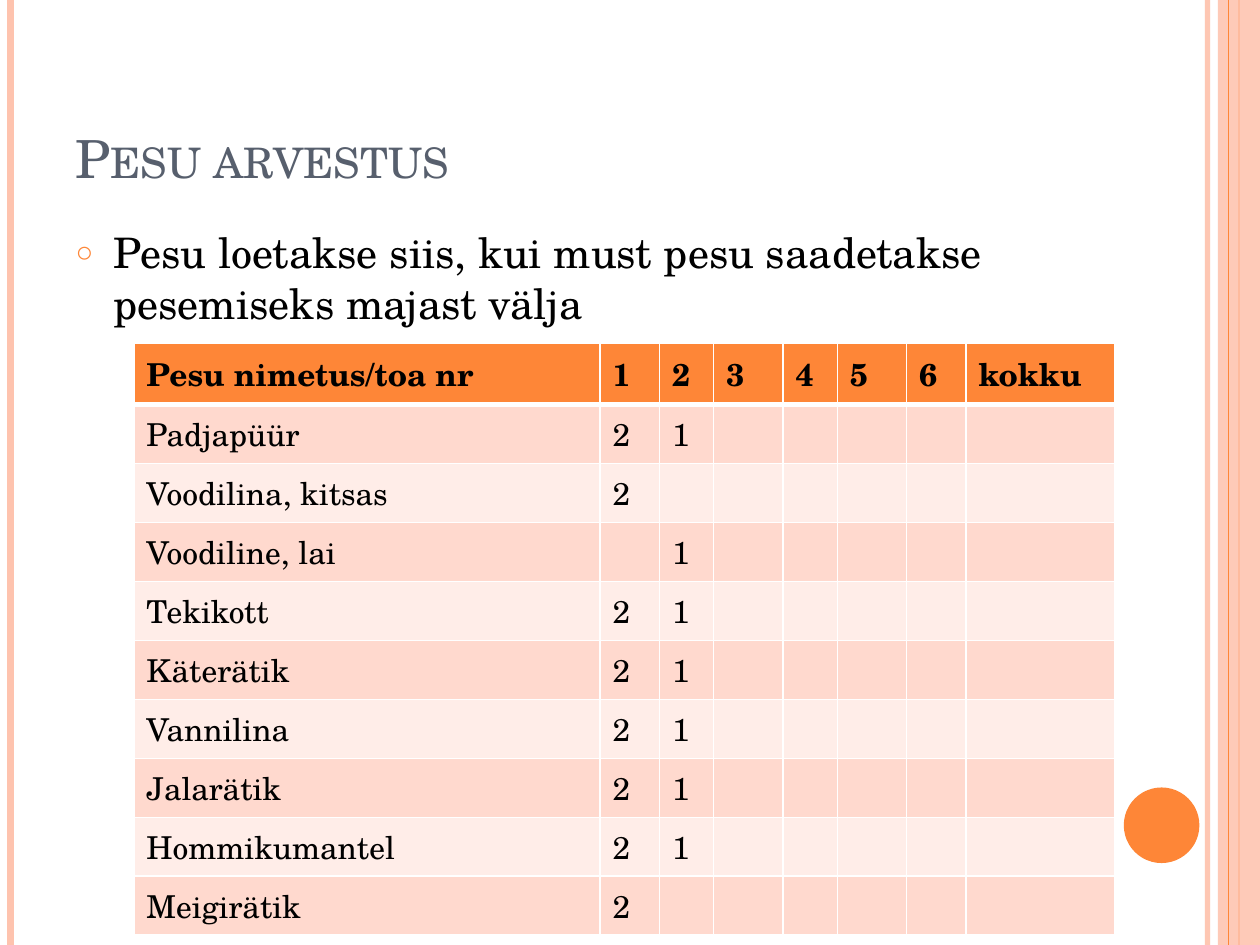
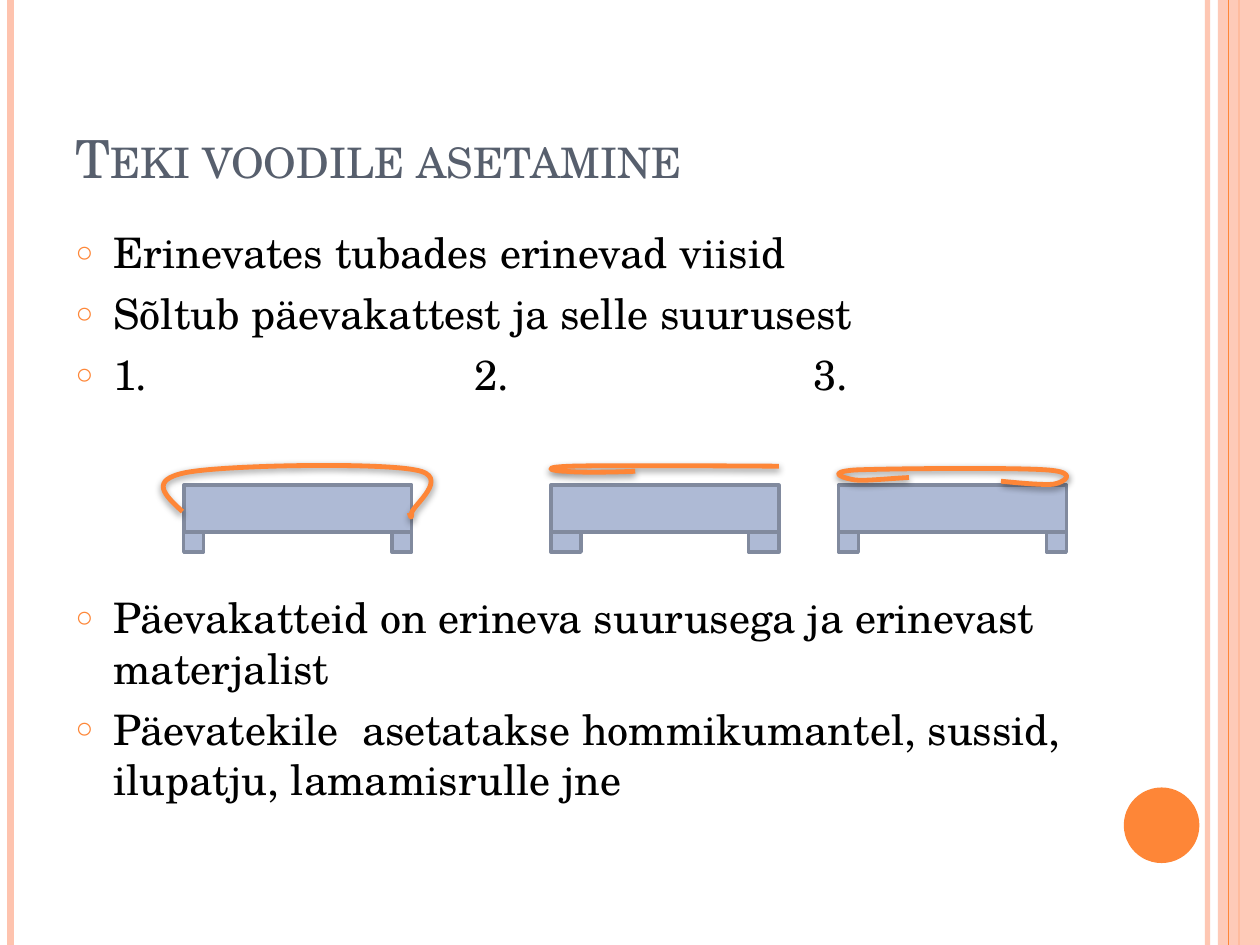
from lxml import etree
from pptx import Presentation
from pptx.dml.color import RGBColor
from pptx.enum.shapes import MSO_CONNECTOR, MSO_SHAPE
from pptx.enum.text import MSO_ANCHOR, MSO_AUTO_SIZE, PP_ALIGN
from pptx.oxml.ns import qn
from pptx.util import Pt

STRAIGHT = MSO_CONNECTOR.STRAIGHT
RECTANGLE, OVAL = MSO_SHAPE.RECTANGLE, MSO_SHAPE.OVAL
MIDDLE, BOTTOM = MSO_ANCHOR.MIDDLE, MSO_ANCHOR.BOTTOM
NO_AUTOFIT = MSO_AUTO_SIZE.NONE
LEFT = PP_ALIGN.LEFT

FONT = "TeX Gyre Schola"
WIDTH, HEIGHT = 720, 540
HEX = {
    "orange": "FE8637", "peach": "FEC3AE", "title": "575F6D", "text": "000000",
    "white": "FFFFFF", "row_dark": "FFD9CE", "row_light": "FFEDE8",
    "bed": "AEBAD5", "bed_edge": "818A9E",
}
COLOR = {name: RGBColor.from_string(value) for name, value in HEX.items()}


def add_xml(parent, tag, **attributes):
    """Append a DrawingML child such as "a:ln" and return it."""
    child = etree.SubElement(parent, qn(tag))
    for key, value in attributes.items():
        child.set(key, str(value))
    return child


def format_runs(paragraph, size, color, bold=False):
    for run in paragraph.runs:
        run.font.name = FONT
        run.font.size = Pt(size)
        run.font.bold = bold
        run.font.color.rgb = COLOR[color]


# Titles and lists
SLIDE_TEXTS = [
    ("Pesu arvestus",
     ["Pesu loetakse siis, kui must pesu saadetakse pesemiseks majast välja"]),
    ("Teki voodile asetamine",
     ["Erinevates tubades erinevad viisid",
      "Sõltub päevakattest ja selle suurusest",
      "1.\t2.\t3.",
      "Päevakatteid on erineva suurusega ja erinevast materjalist",
      "Päevatekile  asetatakse hommikumantel, sussid, ilupatju, lamamisrulle jne"]),
]
BED_DRAWING_GAP = 110.2
NUMBER_TABS = (228, 421.5)

prs = Presentation()
prs.slide_width, prs.slide_height = Pt(WIDTH), Pt(HEIGHT)
layout = prs.slide_layouts[1]
for placeholder, top, height in zip(layout.placeholders, (21.6, 126), (90, 384)):
    placeholder.left, placeholder.top = Pt(36), Pt(top)
    placeholder.width, placeholder.height = Pt(588), Pt(height)

for title_text, items in SLIDE_TEXTS:
    slide = prs.slides.add_slide(layout)
    title, body = slide.placeholders
    title.text_frame.text = title_text
    title.text_frame.vertical_anchor = BOTTOM
    title.text_frame.auto_size = NO_AUTOFIT
    heading = title.text_frame.paragraphs[0]
    heading.alignment = LEFT
    format_runs(heading, 30, "title")
    heading.runs[0].font._element.set("cap", "small")

    body.text_frame.text = "\n".join(items)
    body.text_frame.auto_size = NO_AUTOFIT
    for index, item in enumerate(body.text_frame.paragraphs):
        item.space_before = Pt(BED_DRAWING_GAP if index == 3 else 6)
        format_runs(item, 24, "text")
        properties = item._p.get_or_add_pPr()
        properties.set("marL", str(Pt(21.6)))
        properties.set("indent", str(Pt(-21.6)))
        add_xml(add_xml(properties, "a:buClr"), "a:srgbClr", val=HEX["orange"])
        add_xml(properties, "a:buSzPct", val=70000)
        add_xml(properties, "a:buChar", char="○")
        if "\t" in items[index]:
            tab_list = add_xml(properties, "a:tabLst")
            for position in NUMBER_TABS:
                add_xml(tab_list, "a:tab", pos=Pt(position), algn="l")

laundry_slide, bed_slide = prs.slides

# Side bands and disc: drawn once, then moved to the master
decorations = []
for x, line_width, color, opacity in [
    (690, 3, "peach", 93), (6, 4.5, "peach", 100),
    (708, 1.5, "orange", 100), (702, 0.75, "orange", 100),
]:
    stripe = laundry_slide.shapes.add_connector(STRAIGHT, Pt(x), 0, Pt(x), Pt(HEIGHT))
    stripe.line.width = Pt(line_width)
    stripe.line.color.rgb = COLOR[color]
    add_xml(stripe.element.spPr, "a:effectLst")
    decorations.append((stripe, opacity))
for kind, x, y, width, height, color, opacity in [
    (RECTANGLE, 696, 0, 24, HEIGHT, "peach", 87),
    (OVAL, 642.2, 450, 43.2, 43.2, "orange", 100),
]:
    ornament = laundry_slide.shapes.add_shape(kind, Pt(x), Pt(y), Pt(width), Pt(height))
    ornament.shadow.inherit = False
    ornament.fill.solid()
    ornament.fill.fore_color.rgb = COLOR[color]
    ornament.line.fill.background()
    decorations.append((ornament, opacity))
decorations.insert(3, decorations.pop(4))  # the wide band lies under the last stripe
for number, (decoration, opacity) in enumerate(decorations, start=100):
    if opacity < 100:
        for tint in decoration.element.iter(qn("a:srgbClr")):
            add_xml(tint, "a:alpha", val=opacity * 1000)
    for identity in decoration.element.iter(qn("p:cNvPr")):
        identity.set("id", str(number))
    prs.slide_master.shapes.element.append(decoration.element)

# Laundry table
COLUMN_WIDTHS = [266.4, 34, 31, 39.6, 31, 39.6, 34, 85]
ROW_HEIGHT = 33.7
LAUNDRY = [
    ["Pesu nimetus/toa nr", "1", "2", "3", "4", "5", "6", "kokku"],
    ["Padjapüür", "2", "1"],
    ["Voodilina, kitsas", "2"],
    ["Voodiline, lai", "", "1"],
    ["Tekikott", "2", "1"],
    ["Käterätik", "2", "1"],
    ["Vannilina", "2", "1"],
    ["Jalarätik", "2", "1"],
    ["Hommikumantel", "2", "1"],
    ["Meigirätik", "2"],
]
laundry = laundry_slide.shapes.add_table(
    len(LAUNDRY), len(COLUMN_WIDTHS), Pt(76.5), Pt(196.2),
    Pt(sum(COLUMN_WIDTHS)), Pt(ROW_HEIGHT * len(LAUNDRY))).table
for column, width in zip(laundry.columns, COLUMN_WIDTHS):
    column.width = Pt(width)
for row_index, (row, values) in enumerate(zip(laundry.rows, LAUNDRY)):
    row.height = Pt(ROW_HEIGHT)
    is_header = row_index == 0
    row_color = "orange" if is_header else ("row_light", "row_dark")[row_index % 2]
    for column_index, cell in enumerate(row.cells):
        cell.vertical_anchor = MIDDLE
        borders = cell._tc.get_or_add_tcPr()
        for side in "LRTB":
            is_thick = (is_header and side == "B") or (row_index == 1 and side == "T")
            border = add_xml(borders, f"a:ln{side}", w=Pt(3 if is_thick else 1))
            add_xml(add_xml(border, "a:solidFill"), "a:srgbClr", val=HEX["white"])
        cell.fill.solid()
        cell.fill.fore_color.rgb = COLOR[row_color]
        if column_index < len(values) and values[column_index]:
            cell.text_frame.text = values[column_index]
            format_runs(cell.text_frame.paragraphs[0], 18, "text", is_header)

# Beds: left edge, leg width, then the blanket as its frame (x, y, width, height),
# start point and Bézier segments, measured from the top left of the mattress
MATTRESS_TOP, MATTRESS_WIDTH, MATTRESS_HEIGHT, LEG_HEIGHT = 277.2, 130.3, 26.8, 11.5
BEDS = [
    (105, 11.4, (-11.5, -11.2, 153.4, 29.5), (-0.7, 15.1), [
        ((-10.8, 5.8), (-20.2, -2.9), (1.4, -7.2)),
        ((23.8, -11.5), (110.9, -13), (132.5, -8.6)),
        ((153.4, -5), (131, 11.5), (130.3, 15.8)),
        ((130.3, 20.2), (129.6, 18), (128.9, 15.8))]),
    (314.8, 17.3, (0, -11, 130.3, 3.6), (48.2, -7.9), [
        ((31.7, -7.2), (14.4, -7.2), (8.6, -7.9)),
        ((2.2, -7.9), (-8.6, -10.1), (11.5, -10.8)),
        ((31.7, -11.5), (130.3, -10.8), (130.3, -10.8))]),
    (479.1, 11.4, (0, -9.4, 130.3, 9.4), (40.3, -4.3), [
        ((27.4, -3.6), (14.4, -2.2), (9.4, -2.9)),
        ((4.3, -3.6), (-8.6, -7.2), (9.4, -8.6)),
        ((28.1, -9.4), (100.8, -10.1), (119.5, -8.6)),
        ((138.2, -7.2), (128.2, -1.4), (123.8, -0.7)),
        ((119.5, 0.7), (92.9, -2.2), (92.9, -2.2))]),
]
for bed_left, leg_width, frame, start, segments in BEDS:
    leg_top = MATTRESS_TOP + MATTRESS_HEIGHT
    for x, y, width, height in [
        (bed_left, MATTRESS_TOP, MATTRESS_WIDTH, MATTRESS_HEIGHT),
        (bed_left, leg_top, leg_width, LEG_HEIGHT),
        (bed_left + MATTRESS_WIDTH - leg_width, leg_top, leg_width, LEG_HEIGHT),
    ]:
        bed_part = bed_slide.shapes.add_shape(RECTANGLE, Pt(x), Pt(y), Pt(width), Pt(height))
        bed_part.shadow.inherit = False
        bed_part.fill.solid()
        bed_part.fill.fore_color.rgb = COLOR["bed"]
        bed_part.line.color.rgb = COLOR["bed_edge"]
        bed_part.line.width = Pt(2)

    # The builder knows straight lines only: it sets the frame, the curves follow
    frame_x, frame_y, frame_width, frame_height = frame
    left, top = bed_left + frame_x, MATTRESS_TOP + frame_y
    builder = bed_slide.shapes.build_freeform(Pt(left), Pt(top))
    builder.add_line_segments(
        [(Pt(left + frame_width), Pt(top + frame_height))], close=False)
    blanket = builder.convert_to_shape()
    curve = next(blanket.element.iter(qn("a:path")))
    for straight_step in list(curve):
        curve.remove(straight_step)
    for tag, points in [("a:moveTo", [start])] + [("a:cubicBezTo", s) for s in segments]:
        curve_step = add_xml(curve, tag)
        for x, y in points:
            add_xml(curve_step, "a:pt", x=Pt(x - frame_x), y=Pt(y - frame_y))
    blanket.fill.background()
    blanket.line.color.rgb = COLOR["orange"]
    blanket.line.width = Pt(2.75)
    blanket.shadow.inherit = False
    effects = blanket.element.spPr.find(qn("a:effectLst"))
    shadow = add_xml(effects, "a:outerShdw", blurRad=Pt(4), dist=Pt(1.6), dir=5400000)
    shade = add_xml(shadow, "a:srgbClr", val=HEX["text"])
    add_xml(shade, "a:alpha", val=42000)

prs.save("out.pptx")
